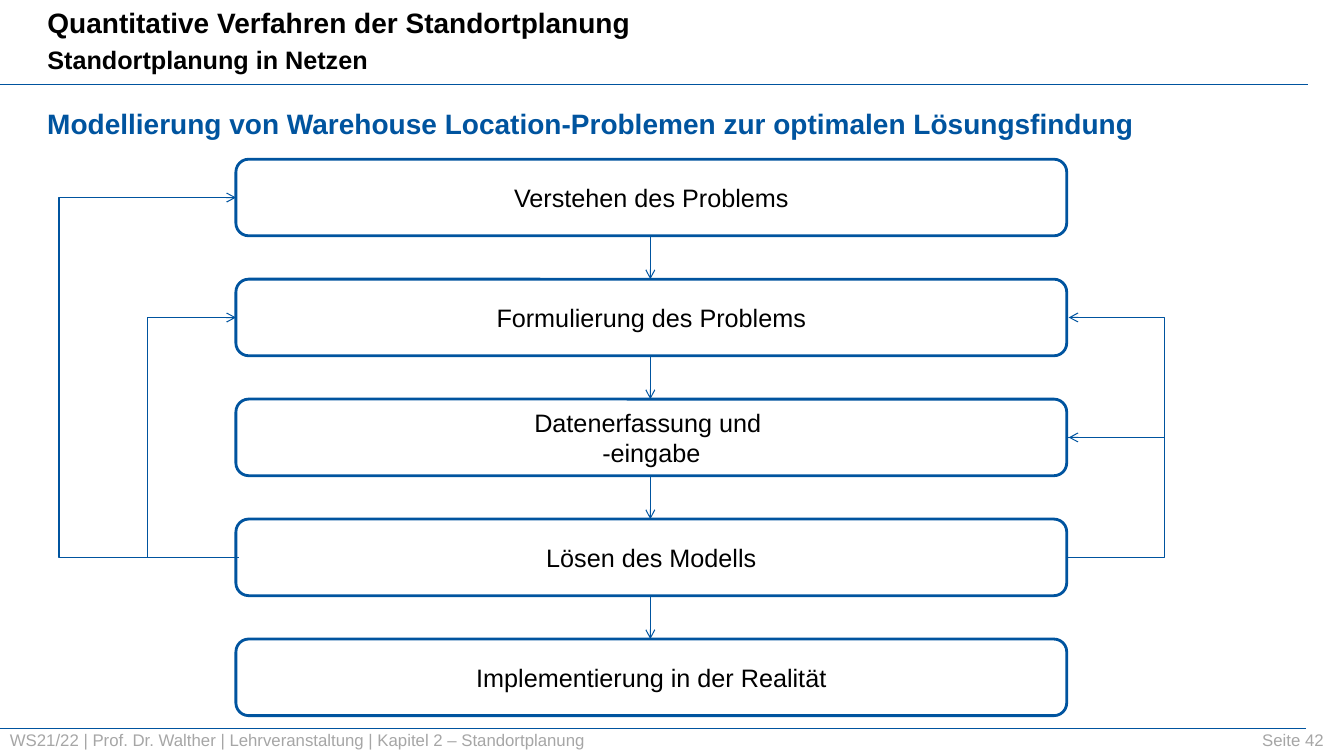
from lxml import etree
from pptx import Presentation
from pptx import util as u
from pptx.dml.color import RGBColor
from pptx.enum import shapes, text
from pptx.oxml import ns

BLUE = RGBColor(0x00, 0x54, 0x9F)
GREY = RGBColor(0xA6, 0xA6, 0xA6)
BLACK = RGBColor(0, 0, 0)

HEADER = [("Quantitative Verfahren der Standortplanung", 20), ("Standortplanung in Netzen", 18)]
HEADING = [("Modellierung von Warehouse Location-Problemen zur optimalen Lösungsfindung", 20)]
FOOTER = [("WS21/22 | Prof. Dr. Walther | Lehrveranstaltung | Kapitel 2 – Standortplanung", 12)]
PAGE = [("Seite 42", 12)]
STEPS = [
    "Verstehen des Problems",
    "Formulierung des Problems",
    "Datenerfassung und \v-eingabe",
    "Lösen des Modells",
    "Implementierung in der Realität",
]
LEFT_LOOPS = [(3, 1, 1.46), (3, 0, 0.58)]
RIGHT_LOOPS = [(2, 1, 11.55), (3, 2, 11.55)]
RULES = [(0, 12.97, 0.84), (-0.02, 12.95, 7.23)]

STEP_LEFT, STEP_TOP, STEP_WIDTH, STEP_HEIGHT, STEP_PITCH = 2.34, 1.58, 8.24, 0.76, 1.19
STEP_MIDDLE = 6.45
LOOP_RIGHT = 10.57
LOOP_DEPTH = 0.03


def write(shape, lines, color=BLACK, bold=False, align=text.PP_ALIGN.LEFT,
          anchor=text.MSO_ANCHOR.MIDDLE, margin=None):
    frame = shape.text_frame
    frame.word_wrap = True
    frame.auto_size = text.MSO_AUTO_SIZE.NONE
    frame.vertical_anchor = anchor
    if margin is not None:
        frame.margin_left = frame.margin_right = u.Inches(margin)
        frame.margin_top = frame.margin_bottom = u.Inches(margin)
    for index, (words, size) in enumerate(lines):
        paragraph = frame.add_paragraph() if index else frame.paragraphs[0]
        paragraph.text = words
        paragraph.alignment = align
        paragraph.space_before = u.Pt(4 if index else 0)
        font = paragraph.font
        font.name, font.size, font.bold = "Arial", u.Pt(size), bold
        font.color.rgb = color


def add_box(slide, left, top, width, height):
    return slide.shapes.add_textbox(*map(u.Inches, (left, top, width, height)))


def connect(slide, start, end, width=0.75, arrow=True, kind=shapes.MSO_CONNECTOR.STRAIGHT):
    line = slide.shapes.add_connector(kind, *map(u.Inches, start + end))
    line.line.color.rgb = BLUE
    line.line.width = u.Pt(width)
    if arrow:
        etree.SubElement(line.line._get_or_add_ln(), ns.qn("a:tailEnd"), type="arrow")
    etree.SubElement(line._element.spPr, ns.qn("a:effectLst"))
    return line


def connect_loop(slide, start, end, reach, turned=False):
    loop = connect(slide, start, end, kind=shapes.MSO_CONNECTOR.ELBOW)
    properties = loop._element.spPr
    if turned:
        properties.find(ns.qn("a:xfrm")).set("rot", "10800000")
    guides = properties.find(ns.qn("a:prstGeom")).find(ns.qn("a:avLst"))
    bend = round(reach / LOOP_DEPTH * 100000)
    etree.SubElement(guides, ns.qn("a:gd"), name="adj1", fmla=f"val {bend}")


def step_top(index):
    return STEP_TOP + index * STEP_PITCH


def step_center(index):
    return step_top(index) + STEP_HEIGHT / 2


def main():
    deck = Presentation()
    deck.slide_width, deck.slide_height = u.Inches(13.33), u.Inches(7.5)
    slide = deck.slides.add_slide(deck.slide_layouts[5])

    header = slide.shapes.title
    header.left, header.top, header.width, header.height = map(u.Inches, (0.37, 0, 9.06, 0.8))
    write(header, HEADER, bold=True, anchor=text.MSO_ANCHOR.TOP)
    write(add_box(slide, 0.37, 1.01, 12.6, 0.45), HEADING, color=BLUE, bold=True,
          anchor=text.MSO_ANCHOR.TOP)
    write(add_box(slide, 0, 7.19, 10.24, 0.3), FOOTER, color=GREY)
    write(add_box(slide, 11.55, 7.24, 1.58, 0.2), PAGE, color=GREY,
          align=text.PP_ALIGN.RIGHT, margin=0)

    for left, right, height in RULES:
        connect(slide, (left, height), (right, height), width=1, arrow=False)

    for index, words in enumerate(STEPS):
        step = slide.shapes.add_shape(
            shapes.MSO_SHAPE.ROUNDED_RECTANGLE,
            *map(u.Inches, (STEP_LEFT, step_top(index), STEP_WIDTH, STEP_HEIGHT)))
        step.shadow.inherit = False
        step.fill.background()
        step.line.color.rgb = BLUE
        step.line.width = u.Pt(2)
        write(step, [(words, 18)], align=text.PP_ALIGN.CENTER)
        if index:
            connect(slide, (STEP_MIDDLE, step_top(index - 1) + STEP_HEIGHT),
                    (STEP_MIDDLE, step_top(index)))

    for source, target, bend in LEFT_LOOPS:
        start = STEP_LEFT + LOOP_DEPTH
        connect_loop(slide, (STEP_LEFT, step_center(target)), (start, step_center(source)),
                     start - bend, turned=True)
    for source, target, bend in RIGHT_LOOPS:
        connect_loop(slide, (LOOP_RIGHT, step_center(source)),
                     (LOOP_RIGHT + LOOP_DEPTH, step_center(target)), bend - LOOP_RIGHT)

    deck.save("out.pptx")


if __name__ == "__main__":
    main()
